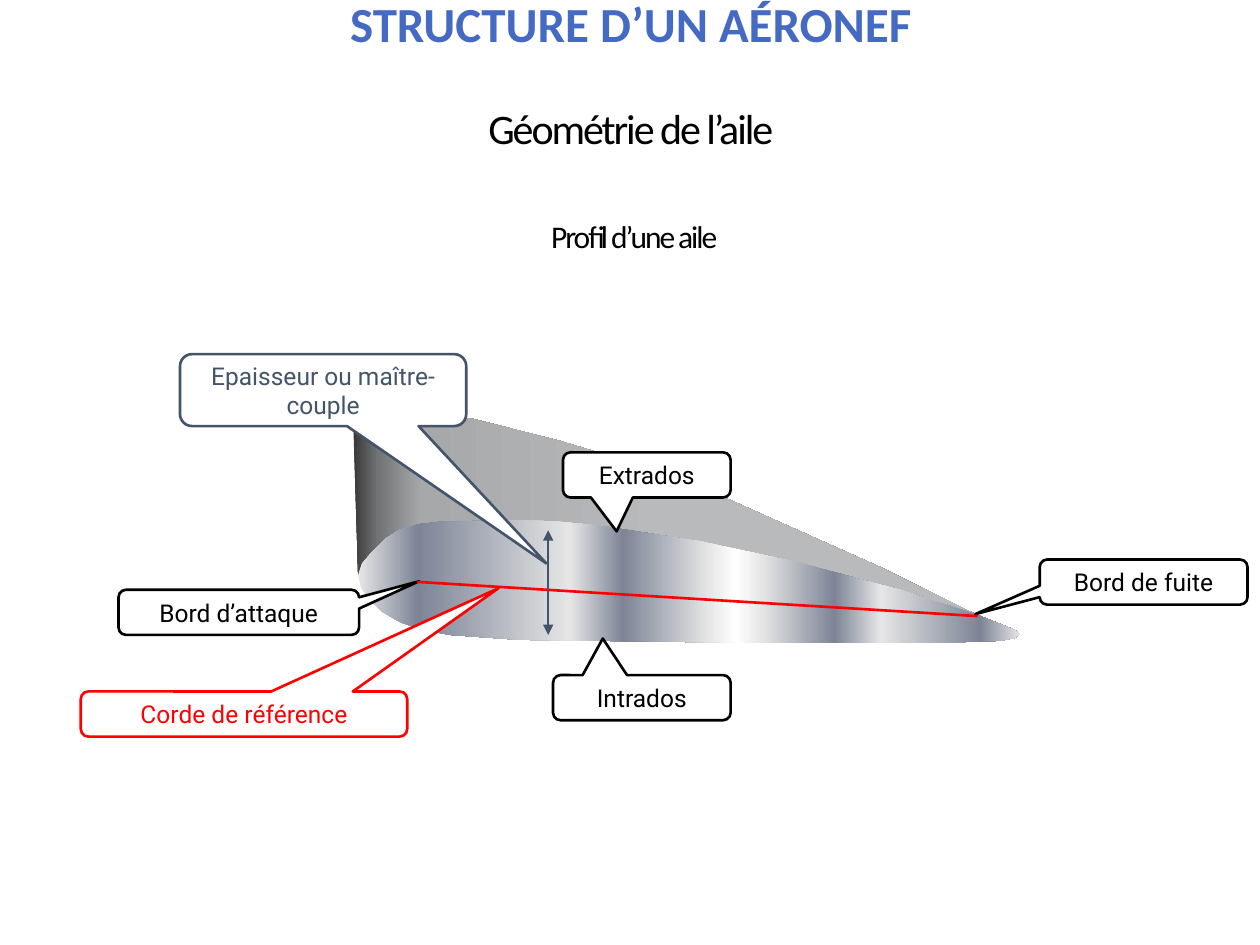
"""Build the slide on wing profile geometry, with its labelled callouts."""
from dataclasses import dataclass

from pptx import Presentation
from pptx import util as u
from pptx.dml.color import RGBColor
from pptx.enum import shapes, text
from pptx.oxml.ns import qn
from lxml import etree

BLACK = RGBColor(0, 0, 0)
WHITE = RGBColor(0xFF, 0xFF, 0xFF)
RED = RGBColor(0xFF, 0, 0)
SLATE = RGBColor(0x44, 0x54, 0x6A)
TITLE_BLUE = RGBColor(0x45, 0x6A, 0xC4)
SILVER = RGBColor(0xE6, 0xE6, 0xE6)
STEEL = RGBColor(0x7D, 0x84, 0x96)
SOOT = RGBColor(0x38, 0x38, 0x38)
ASH = RGBColor(0x72, 0x73, 0x74)
GREY = RGBColor(0xA6, 0xA8, 0xAA)
PALE_GREY = RGBColor(0xB9, 0xBA, 0xBC)
LINE_WIDTH = u.Pt(1.5)


@dataclass(frozen=True)
class Heading:
    wording: str
    left: float
    top: float
    width: float
    height: float
    size: int
    color: RGBColor = BLACK
    bold: bool = False
    spacing: float = -1.2


@dataclass(frozen=True)
class Callout:
    wording: str
    left: float
    top: float
    width: float
    tip: tuple[float, float]
    color: RGBColor = BLACK
    height: float = 0.91


@dataclass(frozen=True)
class Segment:
    start: tuple[float, float]
    end: tuple[float, float]
    color: RGBColor
    arrows: bool = False


@dataclass(frozen=True)
class Surface:
    outline: list[tuple[int, int]]
    stops: list[tuple[int, RGBColor]]


HEADINGS = [
    Heading("STRUCTURE D’UN AÉRONEF", 1.07, 0, 23.29, 1.09, 28, TITLE_BLUE, True, 0),
    Heading("Géométrie de l’aile", 1.07, 2.18, 23.29, 0.94, 24),
    Heading("Profil d’une aile", 8.43, 4.47, 8.71, 0.71, 18),
]

FLANK = Surface(
    [(712, 847), (806, 839), (948, 843), (1129, 889), (1310, 943), (1472, 1008),
     (1774, 1143), (1966, 1238), (1210, 1100), (722, 1159)],
    [(0, SOOT), (4, ASH), (11, GREY), (50, PALE_GREY), (100, PALE_GREY)],
)
PROFILE = Surface(
    [(722, 1159), (730, 1136), (750, 1113), (776, 1087), (806, 1068), (842, 1057),
     (887, 1052), (1048, 1048), (1130, 1052), (1210, 1060), (1411, 1091),
     (1613, 1135), (1814, 1189), (1966, 1238), (2046, 1270), (2056, 1278),
     (2046, 1286), (2016, 1292), (1895, 1296), (1512, 1296), (1210, 1292),
     (1048, 1290), (907, 1280), (850, 1269), (806, 1254), (770, 1233),
     (746, 1210), (728, 1185)],
    [(0, SILVER), (9, STEEL), (32, SILVER), (40, STEEL), (53, SILVER), (57, WHITE),
     (61, SILVER), (72, STEEL), (79, SILVER), (94, STEEL), (100, SILVER)],
)

EDGE_CALLOUTS = [
    Callout("Bord d’attaque", 2.39, 11.89, 4.85, (0.75, -0.69)),
    Callout("Bord de fuite", 20.96, 11.28, 4.19, (-0.81, 0.71)),
    Callout("Extrados", 11.35, 9.12, 3.38, (-0.18, 1.25)),
    Callout("Intrados", 11.15, 13.61, 3.58, (-0.22, -1.31)),
]
CHORD = Segment((8.41, 11.73), (19.71, 12.42), RED)
CHORD_CALLOUT = Callout("Corde de référence", 1.63, 13.94, 6.58, (0.78, -2.79), RED)
THICKNESS = Segment((11.05, 10.69), (11.05, 12.8), SLATE, arrows=True)
THICKNESS_CALLOUT = Callout(
    "Epaisseur ou maître-couple", 3.63, 7.14, 5.77, (0.78, 2.41), SLATE, 1.45)


def write(frame, wording: str, *, font: str, size: int, color: RGBColor,
          bold: bool = False, spacing: float = 0, leading: float = 1.0,
          inset: tuple[float, float] = (0, 0),
          anchor=text.MSO_ANCHOR.TOP) -> None:
    """Fill a text frame with one centred, formatted paragraph."""
    frame.word_wrap = True
    frame.vertical_anchor = anchor
    frame.margin_left = frame.margin_right = u.Cm(inset[0])
    frame.margin_top = frame.margin_bottom = u.Cm(inset[1])
    paragraph = frame.paragraphs[0]
    paragraph.alignment = text.PP_ALIGN.CENTER
    paragraph.line_spacing = leading
    run = paragraph.add_run()
    run.text = wording
    run.font.name = font
    run.font.size = u.Pt(size)
    run.font.bold = bold
    run.font.color.rgb = color
    if spacing:
        run.font._element.set("spc", str(round(spacing * 100)))


def draw_heading(slide, heading: Heading) -> None:
    """Place a heading in a text box."""
    box = slide.shapes.add_textbox(
        u.Cm(heading.left), u.Cm(heading.top), u.Cm(heading.width), u.Cm(heading.height))
    write(box.text_frame, heading.wording, font="Calibri", size=heading.size,
          color=heading.color, bold=heading.bold, spacing=heading.spacing, leading=0.9)


def draw_surface(slide, surface: Surface) -> None:
    """Draw a wing surface, outlined in tenths of a millimetre, with a gradient."""
    start, *rest = surface.outline
    builder = slide.shapes.build_freeform(*start, scale=u.Cm(0.01))
    builder.add_line_segments(rest, close=True)
    wing = builder.convert_to_shape()
    wing.shadow.inherit = False
    wing.line.fill.background()
    wing.fill.gradient()
    wing.fill.gradient_angle = 0
    stop_list = wing._element.spPr.find(".//" + qn("a:gsLst"))
    for default_stop in list(stop_list):
        stop_list.remove(default_stop)
    for percent, color in surface.stops:
        stop = etree.SubElement(stop_list, qn("a:gs"), pos=str(percent * 1000))
        etree.SubElement(stop, qn("a:srgbClr"), val=str(color))


def draw_callout(slide, callout: Callout) -> None:
    """Draw a rounded callout whose tip points at a wing part."""
    bubble = slide.shapes.add_shape(
        shapes.MSO_SHAPE.ROUNDED_RECTANGULAR_CALLOUT, u.Cm(callout.left),
        u.Cm(callout.top), u.Cm(callout.width), u.Cm(callout.height))
    bubble.adjustments[0], bubble.adjustments[1] = callout.tip
    bubble.shadow.inherit = False
    bubble.fill.solid()
    bubble.fill.fore_color.rgb = WHITE
    bubble.line.color.rgb = callout.color
    bubble.line.width = LINE_WIDTH
    write(bubble.text_frame, callout.wording, font="Roboto", size=14,
          color=callout.color, inset=(0.3, 0.15), anchor=text.MSO_ANCHOR.MIDDLE)


def draw_segment(slide, segment: Segment) -> None:
    """Draw a straight line, with arrowheads at both ends if asked."""
    ends = [u.Cm(length) for length in segment.start + segment.end]
    connector = slide.shapes.add_connector(shapes.MSO_CONNECTOR.STRAIGHT, *ends)
    connector.line.color.rgb = segment.color
    connector.line.width = LINE_WIDTH
    if segment.arrows:
        for tag in ("a:headEnd", "a:tailEnd"):
            etree.SubElement(connector.line._get_or_add_ln(), qn(tag), type="triangle")
    etree.SubElement(connector._element.spPr, qn("a:effectLst"))


def main() -> None:
    """Build and save the slide."""
    deck = Presentation()
    deck.slide_width, deck.slide_height = u.Cm(25.4), u.Cm(19.05)
    slide = deck.slides.add_slide(deck.slide_layouts[6])
    for heading in HEADINGS:
        draw_heading(slide, heading)
    for surface in (FLANK, PROFILE):
        draw_surface(slide, surface)
    for callout in EDGE_CALLOUTS:
        draw_callout(slide, callout)
    draw_segment(slide, CHORD)
    draw_callout(slide, CHORD_CALLOUT)
    draw_segment(slide, THICKNESS)
    draw_callout(slide, THICKNESS_CALLOUT)
    deck.save("out.pptx")


if __name__ == "__main__":
    main()
